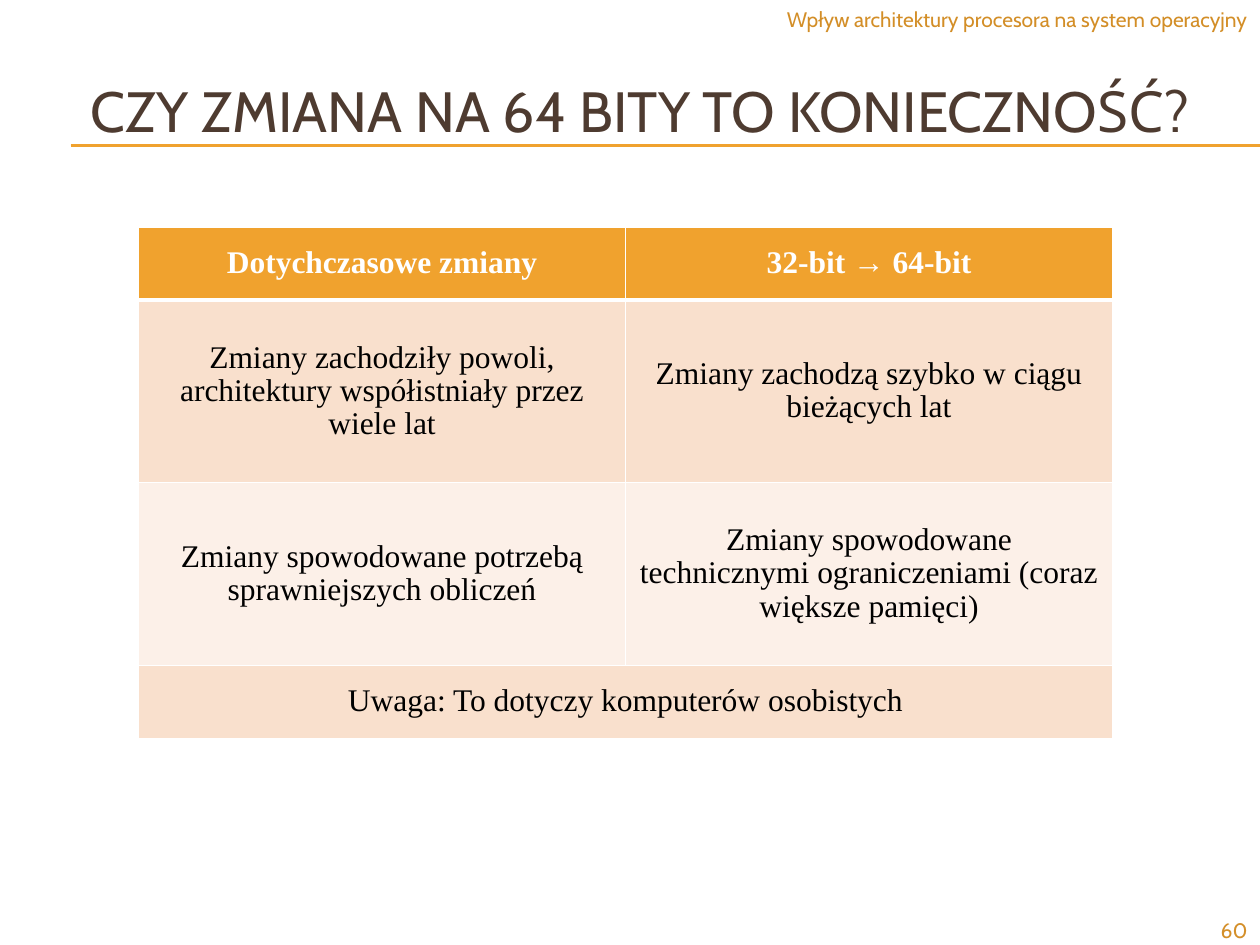
from lxml.etree import SubElement
from pptx import Presentation
from pptx.dml.color import RGBColor
from pptx.enum.shapes import MSO_CONNECTOR
from pptx.enum.text import MSO_ANCHOR, PP_ALIGN
from pptx.oxml.ns import qn
from pptx.util import Inches, Pt

COLORS = {
    "title": "4E3B30",
    "accent": "F0A22E",
    "header": "D38E27",
    "number": "D48F29",
    "band_dark": "F9E0CD",
    "band_light": "FCF0E8",
    "white": "FFFFFF",
    "black": "000000",
}
ROWS = [
    ("Dotychczasowe zmiany", "32-bit → 64-bit"),
    ("Zmiany zachodziły powoli, architektury współistniały przez wiele lat",
     "Zmiany zachodzą szybko w ciągu bieżących lat"),
    ("Zmiany spowodowane potrzebą sprawniejszych obliczeń",
     "Zmiany spowodowane technicznymi ograniczeniami (coraz większe pamięci)"),
    ("Uwaga: To dotyczy komputerów osobistych", ""),
]
ROW_HEIGHTS = [0.58, 1.45, 1.45, 0.58]
ROW_FILLS = ["accent", "band_dark", "band_light", "band_dark"]


def rgb(name):
    return RGBColor.from_string(COLORS[name])


def set_font(p, name, size, color, bold=False):
    p.font.name = name
    p.font.size = Pt(size)
    p.font.bold = bold
    p.font.color.rgb = rgb(color)


def add_text(s, box, text, size, color, align, anchor=MSO_ANCHOR.TOP):
    tf = s.shapes.add_textbox(*map(Inches, box)).text_frame
    tf.word_wrap = True
    tf.vertical_anchor = anchor
    p = tf.paragraphs[0]
    p.text = text
    p.alignment = align
    set_font(p, "Cabin", size, color)


def add_rule(s, left, right, y):
    line = s.shapes.add_connector(
        MSO_CONNECTOR.STRAIGHT, Inches(left), Inches(y), Inches(right), Inches(y))
    line.line.color.rgb = rgb("accent")
    line.line.width = Pt(0.75)
    SubElement(line._element.spPr, qn("a:effectLst"))


def set_borders(cell, top, bottom):
    """Draw white cell borders; top and bottom are widths in points."""
    tcPr = cell._tc.get_or_add_tcPr()
    for side, width in (("L", 1), ("R", 1), ("T", top), ("B", bottom)):
        ln = SubElement(tcPr, qn(f"a:ln{side}"), w=str(Pt(width)))
        fill = SubElement(ln, qn("a:solidFill"))
        SubElement(fill, qn("a:srgbClr"), val=COLORS["white"])


def fill_cell(cell, text, row):
    is_header = row == 0
    set_borders(cell, top=3 if row == 1 else 1, bottom=3 if is_header else 1)
    cell.fill.solid()
    cell.fill.fore_color.rgb = rgb(ROW_FILLS[row])
    cell.vertical_anchor = MSO_ANCHOR.MIDDLE
    p = cell.text_frame.paragraphs[0]
    p.text = text
    p.alignment = PP_ALIGN.CENTER
    p.line_spacing = 0.95
    set_font(p, "Times New Roman", 18, "white" if is_header else "black", is_header)


def add_comparison(s):
    table = s.shapes.add_table(
        len(ROWS), 2, Inches(1.1), Inches(1.8),
        Inches(7.73), Inches(sum(ROW_HEIGHTS))).table
    for i, (texts, height) in enumerate(zip(ROWS, ROW_HEIGHTS)):
        table.rows[i].height = Inches(height)
        for j, text in enumerate(texts):
            fill_cell(table.cell(i, j), text, i)
    last = len(ROWS) - 1
    table.cell(last, 0).merge(table.cell(last, 1))


def main():
    prs = Presentation()
    prs.slide_width, prs.slide_height = Inches(10), Inches(7.5)
    s = prs.slides.add_slide(prs.slide_layouts[6])
    for y in (1.15, 1.16):
        add_rule(s, 0.56, 10, y)
    add_text(s, (0.33, 0.41, 9.5, 0.92), "CZY ZMIANA NA 64 BITY TO KONIECZNOŚĆ?",
             32.4, "title", PP_ALIGN.CENTER, MSO_ANCHOR.MIDDLE)
    add_comparison(s)
    add_text(s, (9.17, 7.23, 0.83, 0.27), "60", 12, "number", PP_ALIGN.RIGHT)
    add_text(s, (5.71, 0, 4.29, 0.31),
             "Wpływ architektury procesora na system operacyjny",
             12, "header", PP_ALIGN.RIGHT)
    prs.save("out.pptx")


if __name__ == "__main__":
    main()
